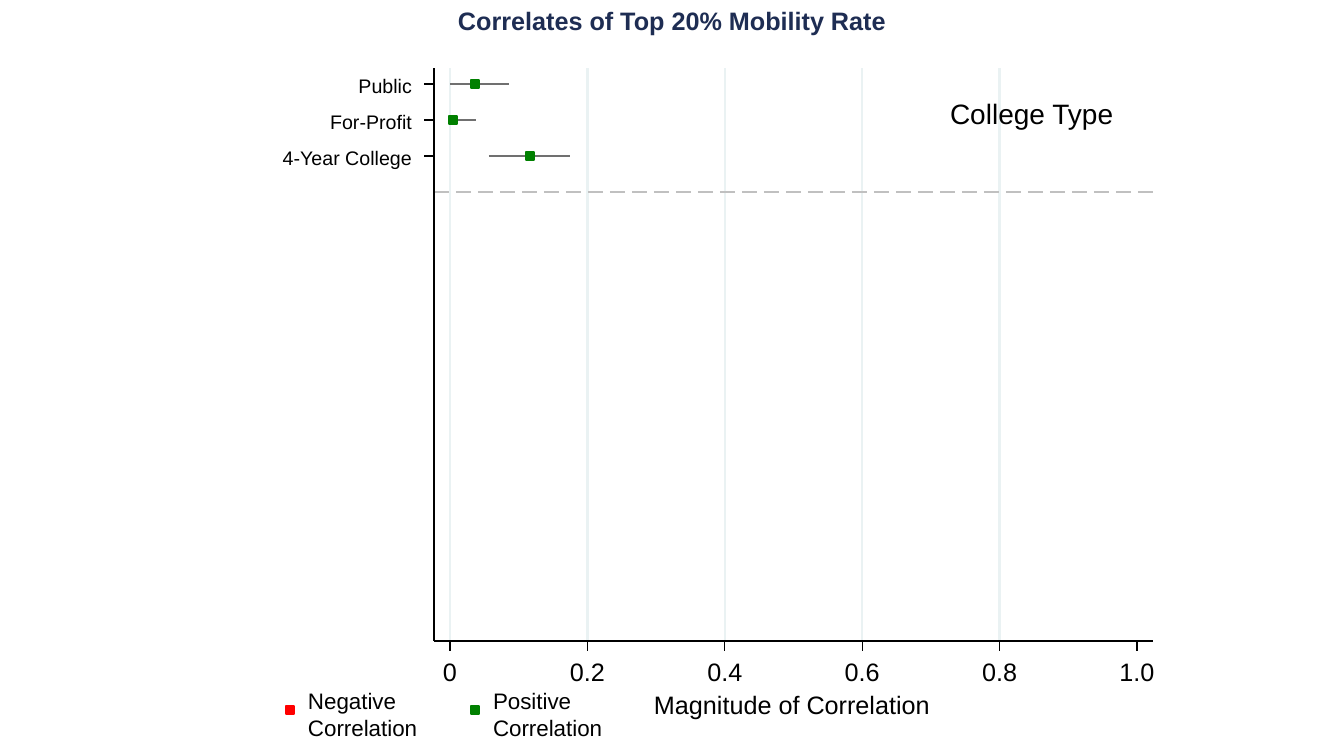
from lxml import etree
from pptx import Presentation
from pptx import util as u
from pptx.dml.color import RGBColor
from pptx.enum import shapes, text
from pptx.oxml.ns import qn

TITLE = "Correlates of Top 20% Mobility Rate"
GROUP = "College Type"
AXIS_TITLE = "Magnitude of Correlation"
ESTIMATES = [
    ("Public", 475, 450, 509),
    ("For-Profit", 453, 450, 476),
    ("4-Year College", 530, 489, 570),
]
TICKS = ["0", "0.2", "0.4", "0.6", "0.8", "1.0"]
LEGEND = [("Negative Correlation", "FF0000"), ("Positive Correlation", "008000")]

BLACK, NAVY, GREEN = "000000", "1E2D53", "008000"
GRID, DASH, INTERVAL = "EAF2F3", "C0C0C0", "707070"
THIN, THICK = 0.88, 1.75
LEFT, TOP, RIGHT, BOTTOM = 434, 68, 1153, 641
ZERO, UNIT = 450, 687
FIRST_ROW, ROW_STEP = 84, 36
DASH_LENGTH, DASH_STEP = 15, 22
TICK_LENGTH, MARKER = 10, 8
LEGEND_LEFT, LEGEND_TOP, LEGEND_STEP = 290, 710, 185


def px(length):
    return u.Emu(round(length * 914400 / 100.8))


def color(value):
    return RGBColor.from_string(value)


def add_line(x1, y1, x2, y2, stroke, width):
    line = page.shapes.add_connector(
        shapes.MSO_CONNECTOR.STRAIGHT, px(x1), px(y1), px(x2), px(y2)
    )
    line.line.color.rgb = color(stroke)
    line.line.width = u.Pt(width)
    etree.SubElement(line.element.spPr, qn("a:effectLst"))


def add_marker(x, y, fill):
    marker = page.shapes.add_shape(
        shapes.MSO_SHAPE.RECTANGLE,
        px(x - MARKER / 2), px(y - MARKER / 2), px(MARKER), px(MARKER),
    )
    marker.shadow.inherit = False
    marker.fill.solid()
    marker.fill.fore_color.rgb = color(fill)
    marker.line.color.rgb = color(fill)
    marker.line.width = u.Pt(THICK)


def write(box, words, size, align, ink=BLACK, bold=False, inset=(0, 0)):
    frame = box.text_frame
    frame.word_wrap = True
    frame.vertical_anchor = text.MSO_ANCHOR.TOP
    frame.margin_left = frame.margin_right = px(inset[0])
    frame.margin_top = frame.margin_bottom = px(inset[1])
    para = frame.paragraphs[0]
    para.alignment = align
    span = para.add_run()
    span.text = words
    span.font.name = "Arial"
    span.font.size = u.Pt(size)
    span.font.bold = bold
    span.font.color.rgb = color(ink)


def add_text(words, x, y, width, height, size, align, inset=(0, 0)):
    box = page.shapes.add_textbox(px(x), px(y), px(width), px(height))
    write(box, words, size, align, inset=inset)


START, CENTER, END = text.PP_ALIGN.LEFT, text.PP_ALIGN.CENTER, text.PP_ALIGN.RIGHT

deck = Presentation()
deck.slide_width, deck.slide_height = px(1344), px(756)
page = deck.slides.add_slide(deck.slide_layouts[5])

title = page.shapes.title
title.left, title.top, title.width, title.height = px(168), px(0), px(1008), px(40)
write(title, TITLE, 18, CENTER, NAVY, True, (10, 5))

tick_places = [ZERO + UNIT * index / 5 for index in range(len(TICKS))]
for x in tick_places[:-1]:
    add_line(x, BOTTOM, x, TOP, GRID, THICK)

divider = FIRST_ROW + ROW_STEP * len(ESTIMATES)
for x in range(LEFT, RIGHT, DASH_STEP):
    add_line(x, divider, x + DASH_LENGTH, divider, DASH, THICK)

add_line(LEFT, BOTTOM, LEFT, TOP, BLACK, THIN)
add_line(LEFT, BOTTOM, RIGHT, BOTTOM, BLACK, THIN)

for row, (label, estimate, low, high) in enumerate(ESTIMATES):
    y = FIRST_ROW + ROW_STEP * row
    add_line(low, y, high, y, INTERVAL, THIN)
    add_marker(estimate, y, GREEN)
    add_line(LEFT, y, LEFT - TICK_LENGTH, y, BLACK, THIN)
    add_text(label, 272, y - 10, 140, 24, 14, END)

for label, x in zip(TICKS, tick_places):
    add_line(x, BOTTOM, x, BOTTOM + TICK_LENGTH, BLACK, THIN)
    add_text(label, x - 20, 656, 40, 30, 18, CENTER)

add_text(AXIS_TITLE, 642, 689, 300, 30, 18, CENTER)
add_text(GROUP, 940, 91, 186, 44, 20, START, (10, 5))

for index, (label, fill) in enumerate(LEGEND):
    x = LEGEND_LEFT + LEGEND_STEP * index
    add_marker(x, LEGEND_TOP, fill)
    add_text(label, x + 8, 682, 168, 64, 16, START, (10, 5))

deck.save("out.pptx")
